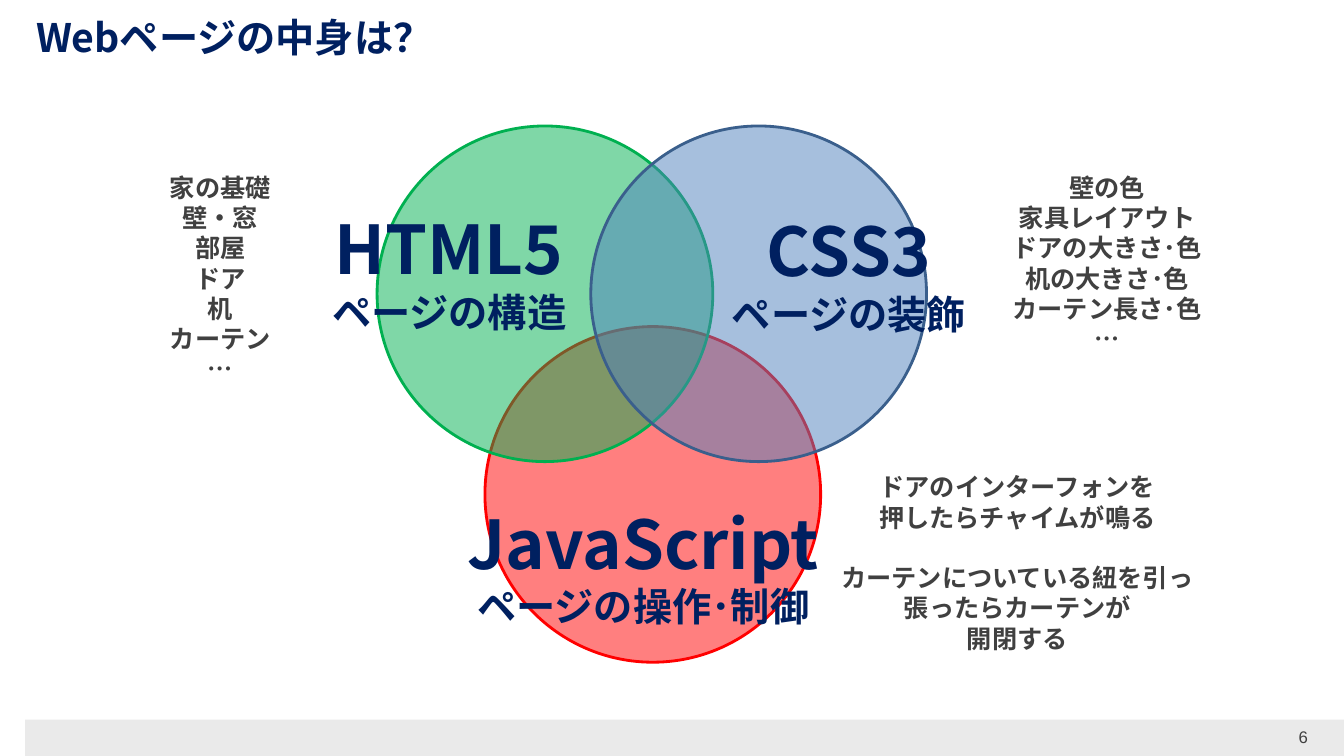
from lxml import etree
from pptx import Presentation
from pptx import util as u
from pptx.dml.color import RGBColor
from pptx.enum import shapes, text
from pptx.oxml import ns

COLORS = {
    "navy": "002060", "gray": "404040", "footer": "EAEAEA",
    "red": "FF0000", "green": "00B050", "blue": "4F81BD", "blue_line": "3A5F8C",
}
JP_FONT = "Noto Sans CJK JP"
LINE_HEIGHT = 1.2
DIAMETER = 3.33


def rgb(name):
    return RGBColor.from_string(COLORS[name])


def add_box(s, box, lines, color, font=JP_FONT, bold=True, wrap=True,
            align=text.PP_ALIGN.CENTER):
    """Add a text box; lines holds (text, size, space before) per paragraph."""
    tf = s.shapes.add_textbox(*map(u.Inches, box)).text_frame
    tf.word_wrap = wrap
    for i, (words, size, gap) in enumerate(lines):
        p = tf.paragraphs[0] if i == 0 else tf.add_paragraph()
        p.text = words
        p.alignment = align
        p.line_spacing = u.Pt(size * LINE_HEIGHT)
        if gap:
            p.space_before = u.Pt(gap)
        p.font.name, p.font.size, p.font.bold = font, u.Pt(size), bold
        p.font.color.rgb = rgb(color)
        latin = p._p.pPr.find(".//" + ns.qn("a:latin"))
        latin.addnext(latin.makeelement(ns.qn("a:ea"), {"typeface": font}))
    return tf


def add_title(s, box, words):
    tf = add_box(s, box, [(words, 28, 0)], "navy", align=text.PP_ALIGN.LEFT)
    tf.vertical_anchor = text.MSO_ANCHOR.MIDDLE


def add_footer(s, box, number):
    left, top, width, height = box
    bar = s.shapes.add_shape(shapes.MSO_SHAPE.RECTANGLE, *map(u.Inches, box))
    bar.shadow.inherit = False
    bar.fill.solid()
    bar.fill.fore_color.rgb = rgb("footer")
    bar.line.fill.background()
    add_box(s, (left + width - 0.78, top + 0.02, 0.75, 0.24), [(number, 12, 0)],
            "gray", font="Arial", bold=False)


def add_circle(s, left, top, fill, line):
    """Add a half-transparent circle of the Venn diagram."""
    sp = s.shapes.add_shape(shapes.MSO_SHAPE.OVAL,
                            *map(u.Inches, (left, top, DIAMETER, DIAMETER)))
    sp.shadow.inherit = False
    sp.fill.solid()
    sp.fill.fore_color.rgb = rgb(fill)
    color = sp._element.spPr.find(ns.qn("a:solidFill"))[0]
    etree.SubElement(color, ns.qn("a:alpha"), val="50000")
    sp.line.color.rgb = rgb(line)
    sp.line.width = u.Pt(2)


def add_venn(s, left, top):
    """Add the three circles, then the labels above them."""
    for dx, dy, fill, line in [
        (1.07, 1.99, "red", "red"),
        (0, 0, "green", "green"),
        (2.12, 0, "blue", "blue_line"),
    ]:
        add_circle(s, left + dx, top + dy, fill, line)
    for dx, dy, width, name, role in [
        (-0.62, 0.76, 2.67, "HTML5", "ページの構造"),
        (3.4, 0.78, 2.56, "CSS3", "ページの装飾"),
        (0.71, 3.68, 3.86, "JavaScript", "ページの操作･制御"),
    ]:
        add_box(s, (left + dx, top + dy, width, 1.38),
                [(name, 48, 0), (role, 28, 0)], "navy", wrap=False)


def add_note(s, box, lines, gap=0):
    add_box(s, box, [(words, 18, gap if i else 0) for i, words in enumerate(lines)],
            "gray")


def build_slide(prs):
    s = prs.slides.add_slide(prs.slide_layouts[6])
    add_footer(s, (0.25, 7.14, 13.08, 0.36), "6")
    add_title(s, (0.26, 0.17, 10.76, 0.39), "Webページの中身は？")
    add_venn(s, 3.74, 1.25)
    add_note(s, (1.15, 1.66, 2.07, 2.22),
             ["家の基礎", "壁・窓", "部屋", "ドア", "机", "カーテン", "…"])
    add_note(s, (9.52, 1.66, 2.92, 1.92),
             ["壁の色", "家具レイアウト", "ドアの大きさ･色", "机の大きさ･色",
              "カーテン長さ･色", "…"])
    add_note(s, (8.14, 4.63, 3.9, 1.92),
             ["ドアのインターフォンを\v押したらチャイムが鳴る",
              "カーテンについている紐を引っ張ったらカーテンが\v開閉する"],
             gap=18 * LINE_HEIGHT)


def main():
    prs = Presentation()
    prs.slide_width, prs.slide_height = u.Inches(13.33), u.Inches(7.5)
    build_slide(prs)
    prs.save("out.pptx")


if __name__ == "__main__":
    main()
